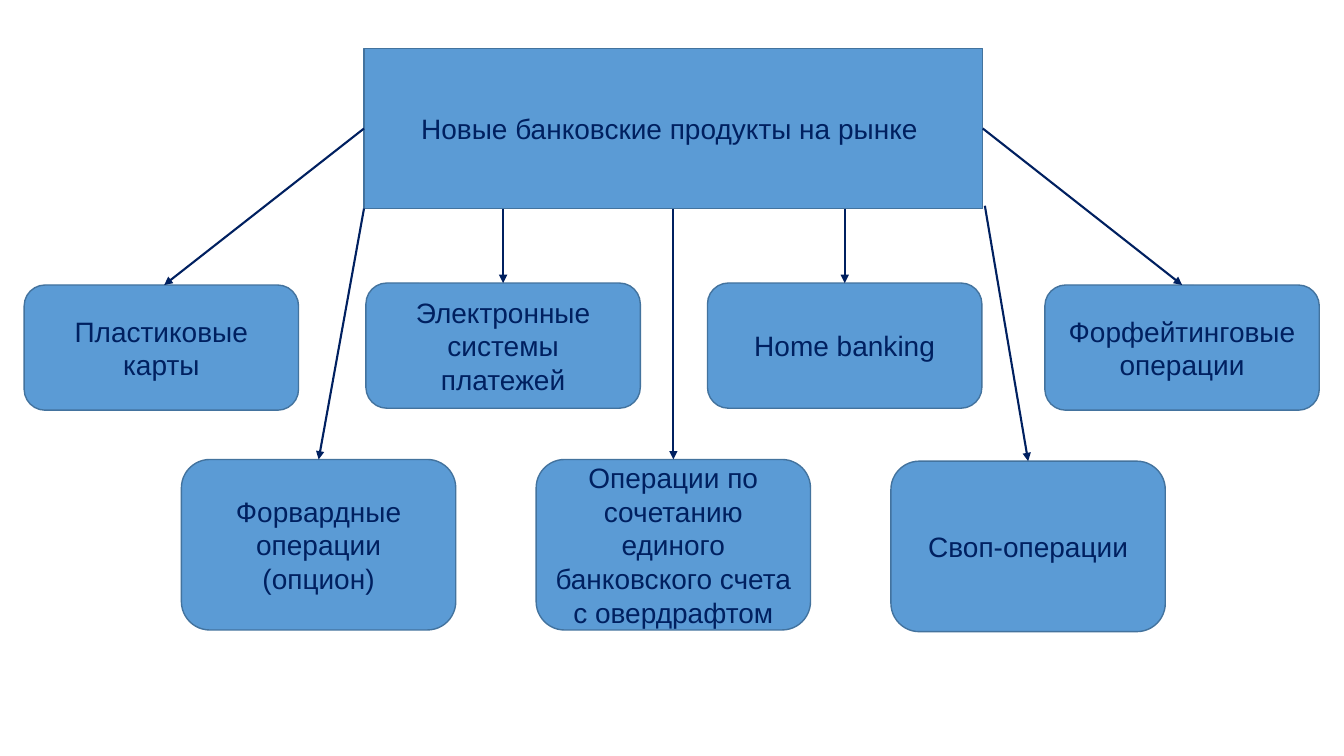
from dataclasses import dataclass

from lxml.etree import SubElement
from pptx import Presentation
from pptx.dml.color import RGBColor
from pptx.enum.shapes import MSO_CONNECTOR, MSO_SHAPE
from pptx.enum.text import MSO_ANCHOR, PP_ALIGN
from pptx.oxml.ns import qn
from pptx.util import Pt


@dataclass(frozen=True)
class Theme:
    fill: RGBColor = RGBColor(0x5B, 0x9B, 0xD5)
    outline: RGBColor = RGBColor(0x43, 0x73, 0x9E)
    ink: RGBColor = RGBColor(0x00, 0x20, 0x60)
    font: str = "Arial"
    text_size: int = 20
    outline_width: float = 1
    arrow_width: float = 1.5


theme = Theme()
prs = Presentation()
prs.slide_width, prs.slide_height = Pt(960), Pt(540)
slide = prs.slides.add_slide(prs.slide_layouts[6])


def add_box(text, *, left, top, width, height, shape=MSO_SHAPE.ROUNDED_RECTANGLE,
            size=theme.text_size, color=theme.ink):
    box = slide.shapes.add_shape(shape, Pt(left), Pt(top), Pt(width), Pt(height))
    box.shadow.inherit = False
    box.fill.solid()
    box.fill.fore_color.rgb = theme.fill
    box.line.color.rgb = theme.outline
    box.line.width = Pt(theme.outline_width)
    frame = box.text_frame
    frame.word_wrap = True
    frame.vertical_anchor = MSO_ANCHOR.MIDDLE
    paragraph = frame.paragraphs[0]
    paragraph.alignment = PP_ALIGN.CENTER
    run = paragraph.add_run()
    run.text = text
    run.font.name = theme.font
    run.font.size = Pt(size)
    run.font.color.rgb = color


def add_arrow(start, end):
    arrow = slide.shapes.add_connector(
        MSO_CONNECTOR.STRAIGHT, *(Pt(value) for value in (*start, *end)))
    arrow.line.color.rgb = theme.ink
    arrow.line.width = Pt(theme.arrow_width)
    SubElement(arrow.line._get_or_add_ln(), qn("a:tailEnd"), type="triangle")
    SubElement(arrow._element.spPr, qn("a:effectLst"))


# Heading
market_left, market_top, market_width, market_height = 260, 34.6, 442, 114.4
market_right = market_left + market_width
market_bottom = market_top + market_height
market_middle = market_top + market_height / 2
add_box("Новые банковские продукты на рынке ", left=market_left, top=market_top,
        width=market_width, height=market_height, shape=MSO_SHAPE.RECTANGLE)

# Products: text, left, top, height, arrow start, arrow tip shift from centre
product_width = 196
upper_height, lower_height = 89.4, 121.8
lower_left, lower_step = 129.6, 253.4
products = [
    ("Пластиковые карты", 17.3, 203.6, upper_height,
     (market_left, market_middle), 2),
    ("Электронные системы платежей", 261.4, 202.2, upper_height,
     (359.4, market_bottom), 0),
    ("Home banking", 505.4, 202.2, upper_height,
     (603.4, market_bottom), 0),
    ("Форфейтинговые операции", 746.4, 203.6, upper_height,
     (market_right, market_middle), 0),
    ("Форвардные операции (опцион)", lower_left, 328.2, lower_height,
     (market_left, market_bottom), 0),
    ("Операции по сочетанию единого банковского счета с овердрафтом",
     lower_left + lower_step, 328.2, lower_height, (481, market_bottom), 0),
    ("Своп-операции", lower_left + 2 * lower_step, 329.4, lower_height,
     (market_right + 1.5, market_bottom - 2), 0),
]
for text, left, top, height, start, tip_shift in products:
    add_box(text, left=left, top=top, width=product_width, height=height)

# Arrows from the heading to each product
for text, left, top, height, start, tip_shift in products:
    add_arrow(start, (left + product_width / 2 + tip_shift, top))

prs.save("out.pptx")
